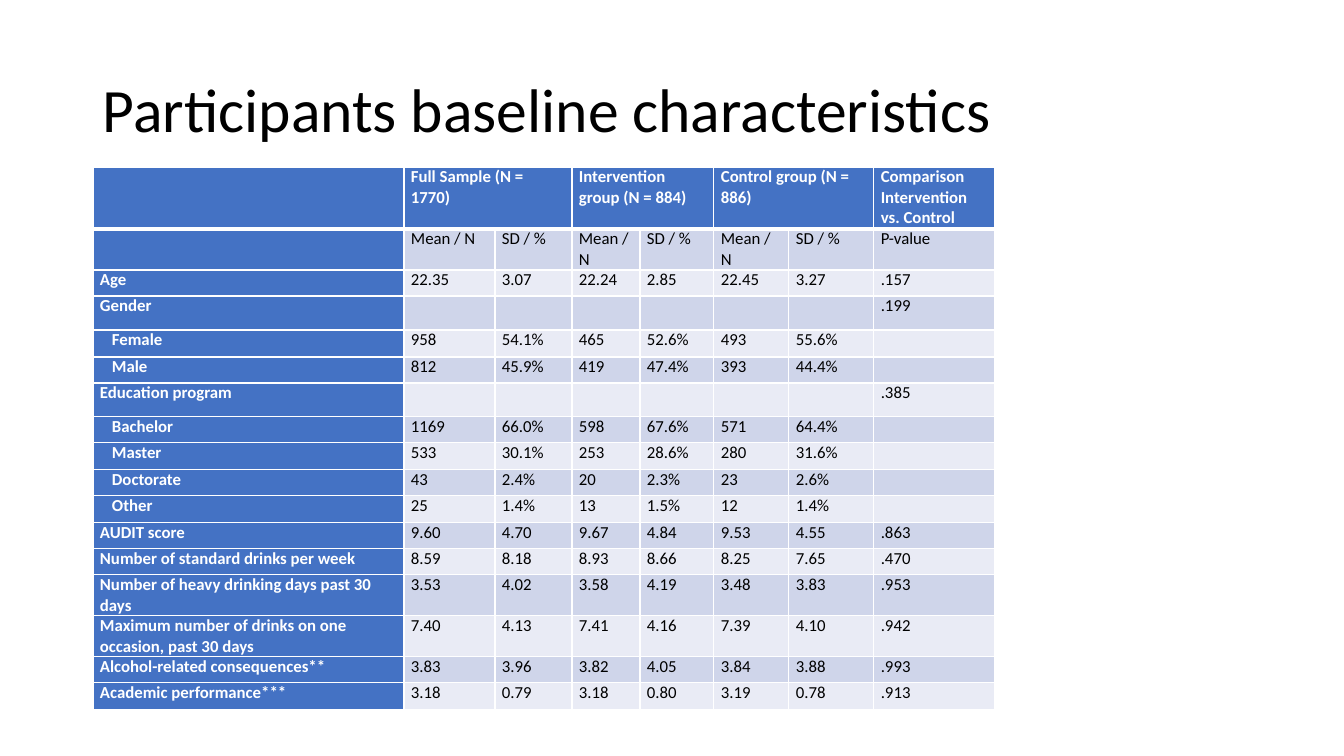
"""Build a slide with the table of participants' baseline characteristics."""
import lxml.etree
import pptx
import pptx.dml.color
import pptx.enum.text
import pptx.oxml.ns
import pptx.util

PX = 914400 / 100.8
FONT = "Calibri"
COLORS = {"header": "4472C4", "odd": "CFD5EA", "even": "E9EBF5", "light": "FFFFFF", "dark": "000000"}
COLUMN_WIDTHS = [311, 91, 77, 68, 74, 75, 85, 121]
ROW_HEIGHTS = [62, 41, 26, 34, 27, 26, 34, 26, 27, 26, 27, 26, 26, 41, 41, 26, 27]
ROWS = [
    ["", "Full Sample (N = 1770)", "", "Intervention group (N = 884)", "",
     "Control group (N = 886)", "", "Comparison Intervention vs. Control"],
    ["", "Mean / N", "SD / %", "Mean / N", "SD / %", "Mean / N", "SD / %", "P-value"],
    ["Age", "22.35", "3.07", "22.24", "2.85", "22.45", "3.27", ".157"],
    ["Gender", "", "", "", "", "", "", ".199"],
    ["Female", "958", "54.1%", "465", "52.6%", "493", "55.6%", ""],
    ["Male", "812", "45.9%", "419", "47.4%", "393", "44.4%", ""],
    ["Education program", "", "", "", "", "", "", ".385"],
    ["Bachelor", "1169", "66.0%", "598", "67.6%", "571", "64.4%", ""],
    ["Master", "533", "30.1%", "253", "28.6%", "280", "31.6%", ""],
    ["Doctorate", "43", "2.4%", "20", "2.3%", "23", "2.6%", ""],
    ["Other", "25", "1.4%", "13", "1.5%", "12", "1.4%", ""],
    ["AUDIT score", "9.60", "4.70", "9.67", "4.84", "9.53", "4.55", ".863"],
    ["Number of standard drinks per week", "8.59", "8.18", "8.93", "8.66", "8.25", "7.65", ".470"],
    ["Number of heavy drinking days past 30 days",
     "3.53", "4.02", "3.58", "4.19", "3.48", "3.83", ".953"],
    ["Maximum number of drinks on one occasion, past 30 days",
     "7.40", "4.13", "7.41", "4.16", "7.39", "4.10", ".942"],
    ["Alcohol-related consequences**", "3.83", "3.96", "3.82", "4.05", "3.84", "3.88", ".993"],
    ["Academic performance***", "3.18", "0.79", "3.18", "0.80", "3.19", "0.78", ".913"],
]
SUBGROUPS = {"Female", "Male", "Bachelor", "Master", "Doctorate", "Other"}


def px(length):
    return pptx.util.Emu(round(length * PX))


def add_span(para, text, size, color, bold=False):
    span = para.add_run()
    span.text = text
    span.font.name = FONT
    span.font.size = pptx.util.Pt(size)
    span.font.bold = bold
    span.font.color.rgb = pptx.dml.color.RGBColor.from_string(COLORS[color])


deck = pptx.Presentation()
deck.slide_width, deck.slide_height = px(1344), px(756)
page = deck.slides.add_slide(deck.slide_layouts[6])

title_box = page.shapes.add_textbox(px(93), px(40), px(1159), px(146))
title_box.text_frame.word_wrap = True
title_box.text_frame.vertical_anchor = pptx.enum.text.MSO_ANCHOR.MIDDLE
title_para = title_box.text_frame.paragraphs[0]
title_para.line_spacing = 0.9
add_span(title_para, "Participants baseline characteristics", 44, "dark")

table = page.shapes.add_table(len(ROWS), len(COLUMN_WIDTHS), px(93), px(167),
                              px(sum(COLUMN_WIDTHS)), px(sum(ROW_HEIGHTS))).table
table.first_row = table.horz_banding = False
for column, width in zip(table.columns, COLUMN_WIDTHS):
    column.width = px(width)
for row, height in zip(table.rows, ROW_HEIGHTS):
    row.height = px(height)
for left in (1, 3, 5):
    table.cell(0, left).merge(table.cell(0, left + 1))

qn = pptx.oxml.ns.qn
for r, values in enumerate(ROWS):
    for c, text in enumerate(values):
        cell = table.cell(r, c)
        cell.margin_left = cell.margin_right = px(7)
        cell.margin_top = cell.margin_bottom = 0
        properties = cell._tc.get_or_add_tcPr()
        for side in ("lnL", "lnR", "lnT", "lnB"):
            thick = (r, side) in ((0, "lnB"), (1, "lnT"))
            border = lxml.etree.SubElement(properties, qn(f"a:{side}"), w=str(pptx.util.Pt(3 if thick else 1)))
            border_fill = lxml.etree.SubElement(border, qn("a:solidFill"))
            lxml.etree.SubElement(border_fill, qn("a:srgbClr"), val=COLORS["light"])
        heading = r == 0 or c == 0
        shade = "header" if heading else "odd" if r % 2 else "even"
        cell.fill.solid()
        cell.fill.fore_color.rgb = pptx.dml.color.RGBColor.from_string(COLORS[shade])
        para = cell.text_frame.paragraphs[0]
        if text in SUBGROUPS:
            para._p.get_or_add_pPr().set("marL", str(px(12)))
        if text:
            add_span(para, text, 12, "light" if heading else "dark", heading)
        else:
            lxml.etree.SubElement(para._p, qn("a:endParaRPr"), sz="1200")

deck.save("out.pptx")
